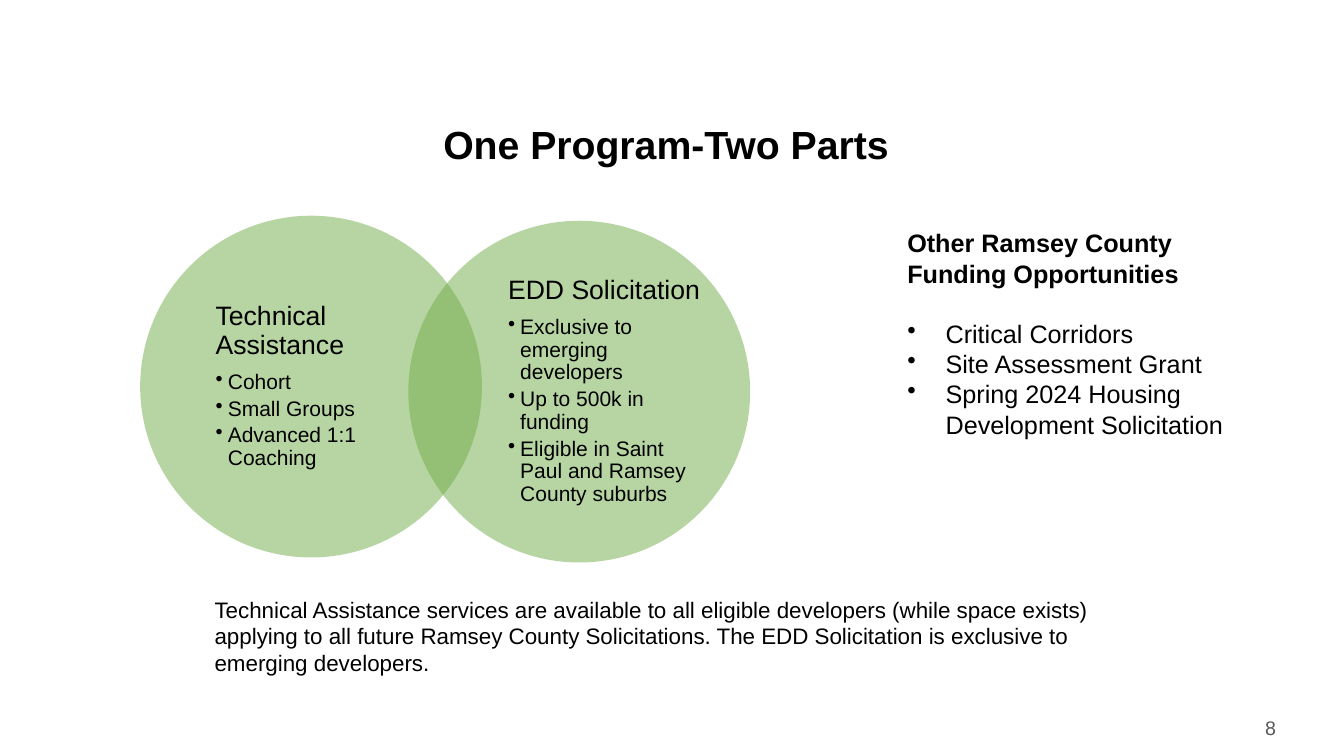
"""Build the slide that shows the two overlapping parts of the program."""
from lxml import etree
from pptx import Presentation
from pptx import util as u
from pptx.dml.color import RGBColor
from pptx.enum import shapes, text
from pptx.oxml.ns import qn

BLACK = RGBColor(0, 0, 0)
GRAY = RGBColor(0x59, 0x59, 0x59)
GREEN = RGBColor(0x70, 0xAD, 0x47)
WHITE = RGBColor(0xFF, 0xFF, 0xFF)


def write(frame, wording, size, color=BLACK, bold=False, align=text.PP_ALIGN.LEFT,
          indent=None, line=None, before=0, after=0):
    first = frame.paragraphs[0]
    para = frame.add_paragraph() if first.runs else first
    para.alignment = align
    para.line_spacing = line
    para.space_before = u.Pt(before)
    para.space_after = u.Pt(after)
    if indent:
        properties = para._p.get_or_add_pPr()
        properties.set("marL", str(u.Inches(indent)))
        properties.set("indent", str(-u.Inches(indent)))
        etree.SubElement(properties, qn("a:buChar")).set("char", "•")
    span = para.add_run()
    span.text = wording
    span.font.name = "Arial"
    span.font.size = u.Pt(size)
    span.font.bold = bold
    span.font.color.rgb = color


class Page:
    def __init__(self, deck):
        self.slide = deck.slides.add_slide(deck.slide_layouts[5])
        background = self.slide.background.fill
        background.solid()
        background.fore_color.rgb = WHITE

    def title(self, wording, left, top, width, height):
        box = self.slide.shapes.title
        box.left, box.top, box.width, box.height = map(u.Inches, (left, top, width, height))
        box.text_frame.auto_size = text.MSO_AUTO_SIZE.NONE
        box.text_frame.vertical_anchor = text.MSO_ANCHOR.MIDDLE
        write(box.text_frame, wording, 28, bold=True, align=text.PP_ALIGN.CENTER)

    def box(self, left, top, width, height):
        box = self.slide.shapes.add_textbox(*map(u.Inches, (left, top, width, height)))
        box.text_frame.word_wrap = True
        return box.text_frame

    def circle(self, left, top, diameter):
        circle = self.slide.shapes.add_shape(
            shapes.MSO_SHAPE.OVAL, *map(u.Inches, (left, top, diameter, diameter)))
        circle.shadow.inherit = False
        circle.fill.solid()
        circle.fill.fore_color.rgb = GREEN
        color = circle.fill._xPr.find(qn("a:solidFill"))[0]
        etree.SubElement(color, qn("a:alpha")).set("val", "50000")
        circle.line.fill.background()

    def venn_side(self, heading, items, left, top, text_left):
        self.circle(left, top, 3.39)
        frame = self.box(text_left, top + 0.4, 1.96, 2.59)
        frame.vertical_anchor = text.MSO_ANCHOR.MIDDLE
        frame.margin_left = frame.margin_right = frame.margin_top = frame.margin_bottom = 0
        write(frame, heading, 19, line=0.9, after=7.5)
        for item in items:
            write(frame, item, 15, indent=0.12, line=0.9, after=3)


def main():
    deck = Presentation()
    deck.slide_width, deck.slide_height = u.Inches(13.33), u.Inches(7.5)
    page = Page(deck)
    page.title("One Program-Two Parts", 1.14, 1.11, 10.93, 0.63)
    page.venn_side("Technical Assistance",
                   ["Cohort", "Small Groups", "Advanced 1:1 Coaching"],
                   1.39, 2.14, 2.14)
    page.venn_side("EDD Solicitation",
                   ["Exclusive to emerging developers", "Up to 500k in funding",
                    "Eligible in Saint Paul and Ramsey County suburbs"],
                   4.05, 2.19, 5.04)

    funding = page.box(8.9, 2.21, 3.55, 2.52)
    write(funding, "Other Ramsey County Funding Opportunities", 18, bold=True, after=21.5)
    for program in ("Critical Corridors", "Site Assessment Grant",
                    "Spring 2024 Housing Development Solicitation"):
        write(funding, program, 18, indent=0.38)

    write(page.box(2.03, 5.86, 9.13, 1.05),
          "Technical Assistance services are available to all eligible developers "
          "(while space exists) applying to all future Ramsey County Solicitations. "
          "The EDD Solicitation is exclusive to emerging developers.", 16)
    write(page.box(12.45, 7.05, 0.87, 0.4), "8", 14, color=GRAY)
    deck.save("out.pptx")


if __name__ == "__main__":
    main()
